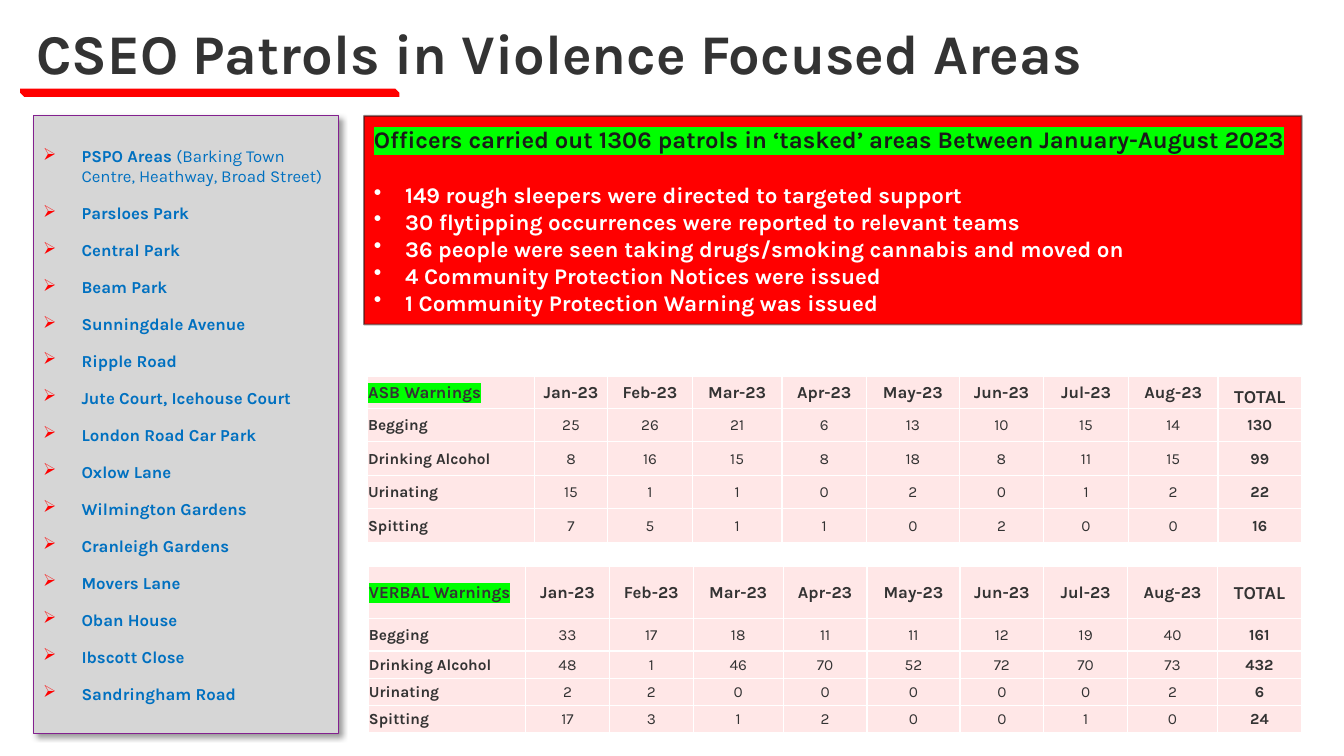
"""Build the slide on patrols in violence focused areas."""
from dataclasses import dataclass

from lxml.etree import SubElement
from pptx import Presentation
from pptx.dml.color import RGBColor as RGB
from pptx.enum.shapes import MSO_SHAPE as SHAPE
from pptx.enum.text import MSO_ANCHOR as ANCHOR, PP_ALIGN as ALIGN
from pptx.oxml.ns import qn
from pptx.util import Emu, Inches, Pt

COLORS = {
    "red": "FF0000", "green": "00FF00", "white": "FFFFFF", "black": "000000",
    "ink": "1A1A1A", "text": "333333", "blue": "0070C0", "purple": "83208F",
    "grey": "D6D6D6", "pink": "FFE7E7",
}
FONT = "Karla"
WIDTH, HEIGHT = Inches(13.33), Inches(7.5)
MONTHS = ["Jan", "Feb", "Mar", "Apr", "May", "Jun", "Jul", "Aug"]
OFFENCES = ["Begging", "Drinking Alcohol", "Urinating", "Spitting"]
PLACES = [
    "Parsloes Park", "Central Park", "Beam Park", "Sunningdale Avenue",
    "Ripple Road", "Jute Court, Icehouse Court", "London Road Car Park",
    "Oxlow Lane", "Wilmington Gardens", "Cranleigh Gardens", "Movers Lane",
    "Oban House", "Ibscott Close", "Sandringham Road",
]
RESULTS = [
    "149 rough sleepers were directed to targeted support",
    "30 flytipping occurrences were reported to relevant teams",
    "36 people were seen taking drugs/smoking cannabis and moved on",
    "4 Community Protection Notices were issued",
    "1 Community Protection Warning was issued",
]


@dataclass(frozen=True)
class Box:
    """A rectangle in percent of the slide's width and height."""
    left: float
    top: float
    width: float
    height: float

    def emu(self) -> tuple:
        return (Emu(int(WIDTH * self.left / 100)), Emu(int(HEIGHT * self.top / 100)),
                Emu(int(WIDTH * self.width / 100)), Emu(int(HEIGHT * self.height / 100)))


@dataclass(frozen=True)
class Warnings:
    """A table of monthly warnings, with column and row proportions."""
    title: str
    box: Box
    cols: list
    rows: list
    counts: list
    total_anchor: ANCHOR


TABLES = [
    Warnings("ASB Warnings", Box(27.31, 49.73, 69.54, 22),
             [1.66, 0.73, 0.84, 0.89, 0.84, 0.92, 0.84, 0.84, 0.89, 0.83],
             [0.32, 0.33, 0.33, 0.33, 0.33],
             [[25, 26, 21, 6, 13, 10, 15, 14, 130],
              [8, 16, 15, 8, 18, 8, 11, 15, 99],
              [15, 1, 1, 0, 2, 0, 1, 2, 22],
              [7, 5, 1, 1, 0, 2, 0, 0, 16]], ANCHOR.BOTTOM),
    Warnings("VERBAL Warnings", Box(27.38, 74.93, 69.47, 22),
             [1.56, 0.83, 0.83, 0.89, 0.83, 0.92, 0.83, 0.83, 0.89, 0.83],
             [0.52, 0.32, 0.27, 0.27, 0.27],
             [[33, 17, 18, 11, 11, 12, 19, 40, 161],
              [48, 1, 46, 70, 52, 72, 70, 73, 432],
              [2, 2, 0, 0, 0, 0, 0, 2, 6],
              [17, 3, 1, 2, 0, 0, 1, 0, 24]], ANCHOR.MIDDLE),
]


def rgb(name: str) -> RGB:
    return RGB.from_string(COLORS[name])


def add_color(parent, name: str):
    return SubElement(parent, qn("a:srgbClr"), val=COLORS[name])


def write(p, text: str, *, size: float, color: str = "text", bold: bool = True,
          highlight: str | None = None) -> None:
    """Add a formatted run to a paragraph."""
    r = p.add_run()
    r.text = text
    r.font.size, r.font.bold, r.font.name = Pt(size), bold, FONT
    r.font.color.rgb = rgb(color)
    if highlight:
        rpr = r.font._element
        mark = SubElement(rpr, qn("a:highlight"))
        add_color(mark, highlight)
        rpr.find(qn("a:solidFill")).addnext(mark)


def add_bullet(tf, char: str, indent: float, color: str):
    """Add a bulleted paragraph with a hanging indent in inches."""
    p = tf.paragraphs[0] if not tf.paragraphs[0].runs else tf.add_paragraph()
    p.alignment = ALIGN.LEFT
    ppr = p._p.get_or_add_pPr()
    ppr.set("marL", str(Inches(indent)))
    ppr.set("indent", str(-Inches(indent)))
    add_color(SubElement(ppr, qn("a:buClr")), color)
    SubElement(ppr, qn("a:buChar"), char=char)
    return p


def add_panel(s, box: Box, fill: str, line: str | None = None, width: float = 1,
              shape: SHAPE = SHAPE.RECTANGLE):
    """Draw a filled shape without a shadow."""
    sp = s.shapes.add_shape(shape, *box.emu())
    sp.shadow.inherit = False
    sp.fill.solid()
    sp.fill.fore_color.rgb = rgb(fill)
    if line:
        sp.line.color.rgb = rgb(line)
        sp.line.width = Pt(width)
    else:
        sp.line.fill.background()
    sp.text_frame.word_wrap = True
    sp.text_frame.vertical_anchor = ANCHOR.MIDDLE
    return sp


def add_title(s) -> None:
    rule = add_panel(s, Box(1.5, 11.73, 28.21, 1.07), "red", shape=SHAPE.SNIP_2_DIAG_RECTANGLE)
    rule.adjustments[0], rule.adjustments[1] = 0, 0.5
    tf = s.shapes.add_textbox(*Box(1.5, 3.07, 84.47, 8.8).emu()).text_frame
    tf.word_wrap, tf.vertical_anchor = True, ANCHOR.MIDDLE
    tf.margin_left = tf.margin_right = Inches(0.16)
    tf.margin_top = tf.margin_bottom = 0
    p = tf.paragraphs[0]
    p.line_spacing = 0.9
    write(p, "CSEO Patrols in Violence Focused Areas", size=40)


def add_places(s) -> None:
    sp = add_panel(s, Box(2.48, 15.33, 22.73, 81.73), "grey", "purple", 0.85)
    effects = sp._element.spPr.find(qn("a:effectLst"))
    shadow = SubElement(effects, qn("a:outerShdw"), blurRad=str(Pt(4)), dist=str(Pt(3)),
                        dir="2700000", algn="tl", rotWithShape="0")
    SubElement(add_color(shadow, "black"), qn("a:alpha"), val="40000")
    for place in ["PSPO Areas ", *PLACES]:
        p = add_bullet(sp.text_frame, "➢", 0.38, "red")
        p.space_after = Pt(12)
        write(p, place, size=12, color="blue")
        if place == "PSPO Areas ":
            write(p, "(Barking Town Centre, Heathway, Broad Street)",
                  size=12, color="blue", bold=False)


def add_results(s) -> None:
    sp = add_panel(s, Box(27.08, 15.33, 69.77, 27.6), "red", "ink", 1.35)
    line_color = sp.line._ln.find(qn("a:solidFill"))[0]
    SubElement(line_color, qn("a:alpha"), val="50000")
    p = sp.text_frame.paragraphs[0]
    p.alignment, p.space_after = ALIGN.LEFT, Pt(20)
    write(p, "Officers carried out 1306 patrols in ‘tasked’ areas Between January-August 2023",
          size=17, color="ink", highlight="green")
    for result in RESULTS:
        write(add_bullet(sp.text_frame, "•", 0.31, "white"), result, size=16, color="white")


def style_cell(cell, anchor: ANCHOR) -> None:
    """Give a cell thin margins, white borders and a pink fill."""
    cell.margin_left = cell.margin_right = cell.margin_top = Inches(0.01)
    cell.margin_bottom = 0
    cell.vertical_anchor = anchor
    tcpr = cell._tc.get_or_add_tcPr()
    for side in "LRTB":
        ln = SubElement(tcpr, qn(f"a:ln{side}"), w=str(Pt(1)))
        add_color(SubElement(ln, qn("a:solidFill")), "white")
    cell.fill.solid()
    cell.fill.fore_color.rgb = rgb("pink")


def add_warnings(s, spec: Warnings) -> None:
    """Draw one table of warnings."""
    grid = [[spec.title, *(f"{m}-23" for m in MONTHS), "TOTAL"]]
    grid += [[name, *row] for name, row in zip(OFFENCES, spec.counts)]
    box = spec.box.emu()
    last = len(spec.cols) - 1
    table = s.shapes.add_table(len(grid), len(spec.cols), *box).table
    table.first_row = table.horz_banding = False
    for col, share in zip(table.columns, spec.cols):
        col.width = Emu(int(box[2] * share / sum(spec.cols)))
    for row, share in zip(table.rows, spec.rows):
        row.height = Emu(int(box[3] * share / sum(spec.rows)))
    for i, values in enumerate(grid):
        for j, value in enumerate(values):
            cell = table.cell(i, j)
            head = i == 0
            style_cell(cell, spec.total_anchor if head and j == last else ANCHOR.MIDDLE)
            p = cell.text_frame.paragraphs[0]
            p.alignment = ALIGN.CENTER if j else ALIGN.LEFT
            write(p, str(value), size=(13 if j == last else 12) if head else 11,
                  bold=head or j in (0, last), highlight="green" if head and j == 0 else None)


def main() -> None:
    prs = Presentation()
    prs.slide_width, prs.slide_height = WIDTH, HEIGHT
    s = prs.slides.add_slide(prs.slide_layouts[6])
    add_title(s)
    add_places(s)
    add_results(s)
    for warnings in TABLES:
        add_warnings(s, warnings)
    prs.save("out.pptx")


if __name__ == "__main__":
    main()
